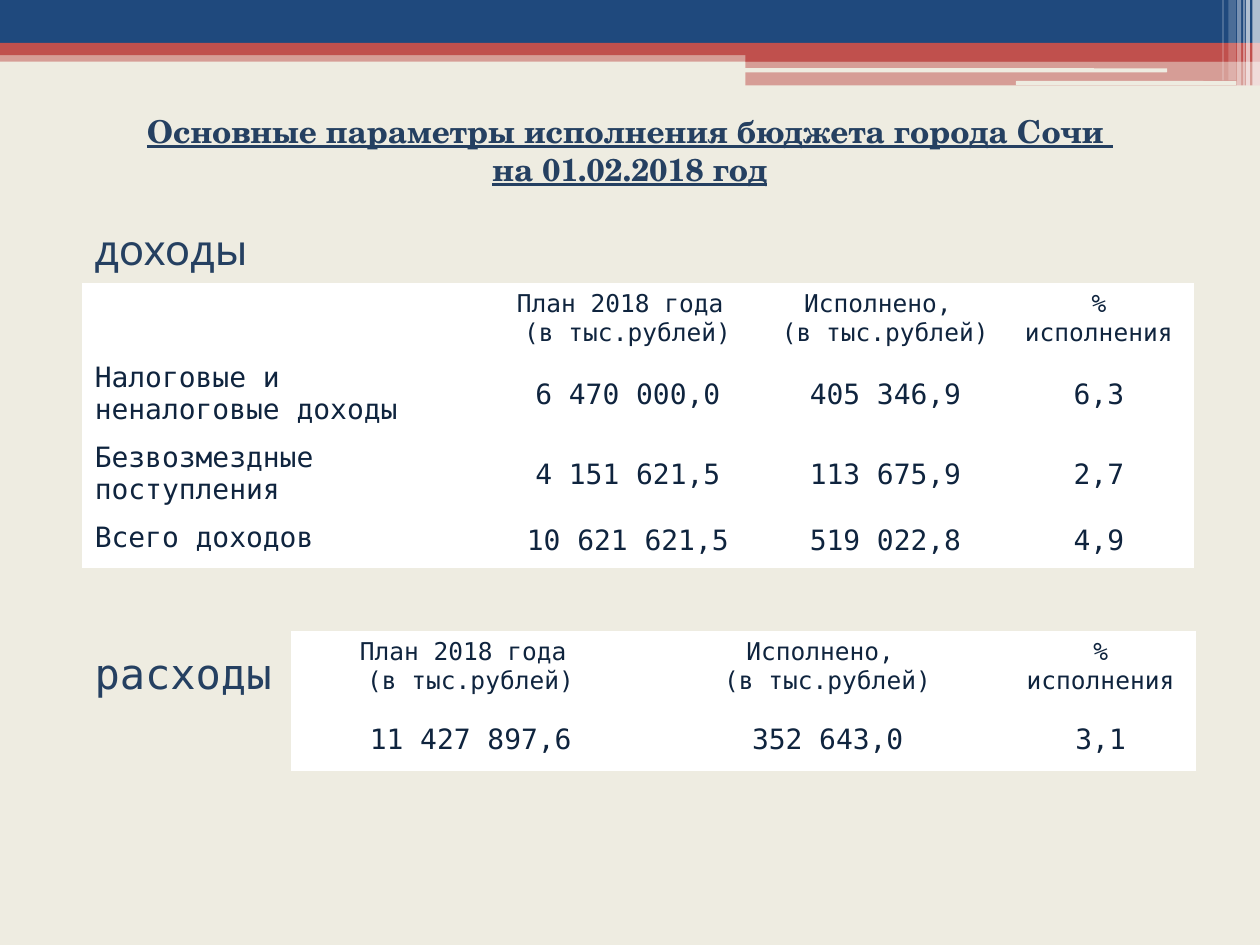
from lxml.etree import SubElement
from pptx import Presentation
from pptx.dml.color import RGBColor
from pptx.enum.shapes import MSO_SHAPE
from pptx.enum.text import MSO_ANCHOR, MSO_AUTO_SIZE, PP_ALIGN
from pptx.oxml.ns import qn
from pptx.util import Pt

BLUE = RGBColor(0x1F, 0x49, 0x7D)
RED = RGBColor(0xC0, 0x50, 0x4D)
CREAM = RGBColor(0xEE, 0xEC, 0xE1)
WHITE = RGBColor(0xFF, 0xFF, 0xFF)
NAVY = RGBColor(0x25, 0x40, 0x61)
INK = RGBColor(0x0F, 0x24, 0x3E)
MONO = "DejaVu Sans Mono"
SERIF = "TeX Gyre Schola"

PLAN = "План 2018 года \n(в тыс.рублей)"
DONE = "Исполнено, \n(в тыс.рублей)"
PERCENT = "% исполнения"
INCOME = [
    ["", PLAN, DONE, PERCENT],
    ["Налоговые и неналоговые доходы", "6 470 000,0", "405 346,9", "6,3"],
    ["Безвозмездные поступления", "4 151 621,5", "113 675,9", "2,7"],
    ["Всего доходов", "10 621 621,5", "519 022,8", "4,9"],
]
EXPENSES = [
    [PLAN, DONE, PERCENT],
    ["11 427 897,6", "352 643,0", "3,1"],
]


def write(tf, text, size=16, font=MONO, color=INK, align=PP_ALIGN.LEFT,
          bold=False, underline=False):
    tf.text = text
    for p in tf.paragraphs:
        p.alignment = align
        p.font.size = Pt(size)
        for r in p.runs:
            r.font.size = Pt(size)
            r.font.name = font
            r.font.color.rgb = color
            r.font.bold = bold
            r.font.underline = underline


def add_block(s, box, color, alpha=100, kind=MSO_SHAPE.RECTANGLE):
    sp = s.shapes.add_shape(kind, *map(Pt, box))
    sp.shadow.inherit = False
    sp.line.fill.background()
    sp.fill.solid()
    sp.fill.fore_color.rgb = color
    if alpha < 100:
        clr = sp.fill._xPr.find(".//" + qn("a:srgbClr"))
        SubElement(clr, qn("a:alpha"), val=str(alpha * 1000))


def add_banner(s, x, y, w):
    add_block(s, (x, y + 28.8, w, 6.5), RED, 50)
    add_block(s, (x, y, w, 24.5), BLUE)
    add_block(s, (x, y + 24.5, w, 7), RED)
    add_block(s, (x + 426, y + 28, w - 426, 7.3), RED)
    add_block(s, (x + 426, y + 34.6, w - 426, 14.2), RED, 50)
    for left, top, width in [(425.5, 39, 241.5), (580.5, 46.3, 126)]:
        add_block(s, (x + left, y + top, width, 2.3), CREAM,
                  kind=MSO_SHAPE.ROUNDED_RECTANGLE)
    stripes = [(715.6, 4.4, 49, 65), (712, 2.2, 49, 65), (710.5, 0.8, 49, 60),
               (707, 2.2, 49, 40), (702, 4.3, 46, 20), (698.5, 0.8, 46, 30)]
    for left, width, height, alpha in stripes:
        add_block(s, (x + left, y, width, height), WHITE, alpha)


def place_title(s, box, text):
    sp = s.shapes.title
    sp.left, sp.top, sp.width, sp.height = map(Pt, box)
    tf = sp.text_frame
    tf.word_wrap = True
    tf.auto_size = MSO_AUTO_SIZE.SHAPE_TO_FIT_TEXT
    tf.vertical_anchor = MSO_ANCHOR.TOP
    write(tf, text, size=18, font=SERIF, color=NAVY, align=PP_ALIGN.CENTER,
          bold=True, underline=True)


def add_label(s, box, text, font):
    tf = s.shapes.add_textbox(*map(Pt, box)).text_frame
    tf.word_wrap = True
    tf.auto_size = MSO_AUTO_SIZE.SHAPE_TO_FIT_TEXT
    write(tf, text, size=24, font=font, color=NAVY)


def add_borders(cell, bottom):
    tcPr = cell._tc.get_or_add_tcPr()
    for i, (side, width) in enumerate([("L", 1), ("R", 1), ("T", 1), ("B", bottom)]):
        ln = SubElement(tcPr, qn("a:ln" + side), w=str(Pt(width)))
        SubElement(SubElement(ln, qn("a:solidFill")), qn("a:srgbClr"), val=str(WHITE))
        tcPr.insert(i, ln)


def add_budget_table(s, x, y, rows, widths, heights):
    table = s.shapes.add_table(len(rows), len(widths), Pt(x), Pt(y),
                               Pt(sum(widths)), Pt(sum(heights))).table
    for col, width in zip(table.columns, widths):
        col.width = Pt(width)
    for i, (row, height) in enumerate(zip(rows, heights)):
        table.rows[i].height = Pt(height)
        for j, text in enumerate(row):
            cell = table.cell(i, j)
            cell.fill.solid()
            cell.fill.fore_color.rgb = WHITE
            add_borders(cell, bottom=1 if i else 3)
            is_name = len(row) == 4 and j == 0
            if i and not is_name:
                cell.vertical_anchor = MSO_ANCHOR.MIDDLE
            write(cell.text_frame, text, size=16 if i else 14,
                  align=PP_ALIGN.LEFT if is_name else PP_ALIGN.CENTER)


def main():
    prs = Presentation()
    prs.slide_width, prs.slide_height = Pt(720), Pt(540)
    s = prs.slides.add_slide(prs.slide_layouts[5])
    s.background.fill.solid()
    s.background.fill.fore_color.rgb = CREAM
    add_banner(s, 0, 0, 720)
    place_title(s, (17, 60.5, 686, 51),
                "Основные параметры исполнения бюджета города Сочи \nна 01.02.2018 год")
    add_label(s, (47, 124, 158, 36), "доходы", "Karla")
    add_budget_table(s, 47, 162, INCOME, [232.5, 158.5, 136, 108], [41, 44, 44, 30])
    add_label(s, (47, 366.5, 158, 36), "расходы", MONO)
    add_budget_table(s, 167, 361, EXPENSES, [204, 204, 108], [45, 34])
    prs.save("out.pptx")


if __name__ == "__main__":
    main()
